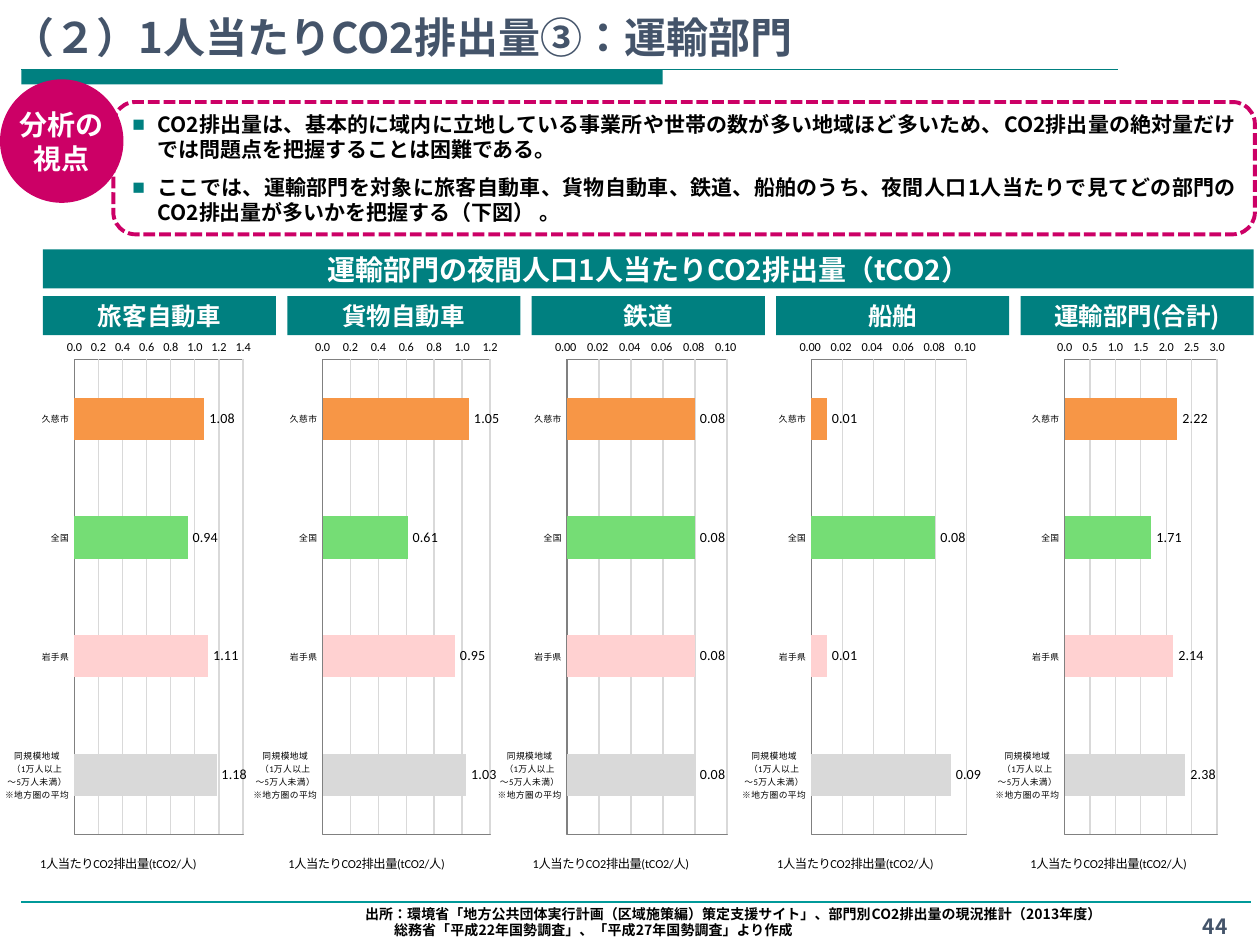
import pptx
import pptx.util
import pptx.chart.data
import pptx.dml.color
import pptx.enum.chart
import pptx.enum.dml
import pptx.enum.lang
import pptx.enum.shapes
import pptx.enum.text
import pptx.oxml.ns
from lxml import etree

Pt = pptx.util.Pt
RGB = pptx.dml.color.RGBColor.from_string
qn = pptx.oxml.ns.qn
ALIGN = pptx.enum.text.PP_ALIGN
ANCHOR = pptx.enum.text.MSO_ANCHOR
SHAPE = pptx.enum.shapes.MSO_SHAPE
COLORS = {
    "teal": "008080", "rule": "009999", "magenta": "CC0066", "navy": "44546A",
    "black": "000000", "white": "FFFFFF", "axis": "808080", "grid": "D9D9D9",
    "series": "4F81BD", "city": "F79646", "nation": "75DD75",
    "prefecture": "FFD1D1", "peers": "D9D9D9",
}
FONT = "Noto Sans CJK JP"

deck = pptx.Presentation()
deck.slide_width, deck.slide_height = pptx.util.Inches(10), pptx.util.Inches(7.5)
COL, ROW = deck.slide_width / 10, deck.slide_height / 7.5
slide = deck.slides.add_slide(deck.slide_layouts[1])
shapes = slide.shapes


def box(left, top, width, height):
    return tuple(round(v) for v in (left * COL, top * ROW, width * COL, height * ROW))


def style(frame, size, color, align, anchor):
    frame.word_wrap = True
    frame.auto_size = pptx.enum.text.MSO_AUTO_SIZE.NONE
    frame.vertical_anchor = anchor
    for paragraph in frame.paragraphs:
        paragraph.alignment = align
        for run in paragraph.runs:
            run.font.size, run.font.bold, run.font.name = Pt(size), True, FONT
            run.font.language_id = pptx.enum.lang.MSO_LANGUAGE_ID.JAPANESE
            run.font.color.rgb = RGB(COLORS[color])
            east_asian = etree.Element(qn("a:ea"), typeface=FONT)
            run.font._element.find(qn("a:latin")).addnext(east_asian)


title = shapes.title
title.left, title.top, title.width, title.height = box(0, 0, 8.69, 0.54)
title.text_frame.text = "（２）1人当たりCO2排出量③：運輸部門"
style(title.text_frame, 24, "navy", ALIGN.LEFT, ANCHOR.BOTTOM)

viewpoints = slide.placeholders[1]
viewpoints.left, viewpoints.top, viewpoints.width, viewpoints.height = box(0.95, 0.81, 8.96, 1.05)
viewpoints.text_frame.text = (
    "CO2排出量は、基本的に域内に立地している事業所や世帯の数が多い地域ほど多いため、CO2排出量の絶対量だけでは問題点を把握することは困難である。\n"
    "ここでは、運輸部門を対象に旅客自動車、貨物自動車、鉄道、船舶のうち、夜間人口1人当たりで見てどの部門のCO2排出量が多いかを把握する（下図） 。"
)
for order, paragraph in enumerate(viewpoints.text_frame.paragraphs):
    properties = paragraph._p.get_or_add_pPr()
    properties.set("marL", str(int(0.2 * COL)))
    properties.set("indent", str(int(-0.2 * COL)))
    bullet_color = etree.SubElement(properties, qn("a:buClr"))
    etree.SubElement(bullet_color, qn("a:srgbClr"), val=COLORS["teal"])
    etree.SubElement(properties, qn("a:buChar"), char="■")
    paragraph.space_before, paragraph.space_after = Pt(3 if order else 0), Pt(4)
style(viewpoints.text_frame, 12, "black", ALIGN.JUSTIFY, ANCHOR.MIDDLE)

for left, right, top, color in ((0.17, 8.87, 0.55, "teal"), (0.17, 9.93, 7.16, "rule")):
    start_x, y, span, _ = box(left, top, right - left, 0)
    rule = shapes.add_connector(pptx.enum.shapes.MSO_CONNECTOR.STRAIGHT, start_x, y, start_x + span, y)
    rule.line.color.rgb = RGB(COLORS[color])
    rule.line.width = Pt(0.75)
    etree.SubElement(rule._element.spPr, qn("a:effectLst"))

REGIONS = ["久慈市", "全国", "岩手県", "同規模地域\n（1万人以上\n～5万人未満）\n※地方圏の平均"]
TENTHS = "#,##0.0;[Red]\\-#,##0.0"
HUNDREDTHS = "#,##0.00_);[Red]\\(#,##0.00\\)"
SECTORS = [
    ("旅客自動車", 0, 2.02, 0.59, 1.34, (1.08, 0.94, 1.11, 1.18), 1.4, 0.2, TENTHS),
    ("貨物自動車", 1.97, 2.03, 2.56, 1.33, (1.05, 0.61, 0.95, 1.03), 1.2, 0.2, TENTHS),
    ("鉄道", 3.91, 1.99, 4.5, 1.27, (0.08, 0.08, 0.08, 0.08), 0.1, 0.02, HUNDREDTHS),
    ("船舶", 5.85, 1.97, 6.44, 1.23, (0.01, 0.08, 0.01, 0.09), 0.1, 0.02, HUNDREDTHS),
    ("運輸部門(合計)", 7.86, 1.89, 8.45, 1.21, (2.22, 1.71, 2.14, 2.38), 3, 0.5, TENTHS),
]
for name, left, width, plot_left, plot_width, values, top_value, step, axis_format in SECTORS:
    emissions = pptx.chart.data.CategoryChartData()
    emissions.categories = REGIONS
    emissions.add_series("Series 1", values)
    chart = shapes.add_chart(
        pptx.enum.chart.XL_CHART_TYPE.BAR_CLUSTERED, *box(left, 2.53, width, 4.6), emissions
    ).chart
    chart.has_legend = chart.has_title = False
    chart.font.size, chart.font.name = Pt(10), "Calibri"
    chart.font.color.rgb = RGB(COLORS["black"])

    regions, amounts = chart.category_axis, chart.value_axis
    for axis, size in ((regions, 5), (amounts, 7)):
        axis.major_tick_mark = axis.minor_tick_mark = pptx.enum.chart.XL_TICK_MARK.NONE
        axis.tick_labels.font.size = Pt(size)
        axis.tick_labels.font.name = "Calibri"
        axis.tick_labels.font.color.rgb = RGB(COLORS["black"])
    regions.reverse_order = True
    regions.format.line.color.rgb = RGB(COLORS["axis"])
    regions.format.line.width = Pt(0.75)
    amounts.format.line.fill.background()
    amounts.minimum_scale, amounts.maximum_scale, amounts.major_unit = 0, top_value, step
    amounts.tick_labels.number_format = axis_format
    amounts.tick_labels.number_format_is_linked = False
    amounts.major_gridlines.format.line.color.rgb = RGB(COLORS["grid"])
    amounts.major_gridlines.format.line.width = Pt(0.75)

    caption = amounts.axis_title.text_frame
    caption.text = "1人当たりCO2排出量(tCO2/人)"
    caption_font = caption.paragraphs[0].runs[0].font
    caption_font.size, caption_font.bold, caption_font.name = Pt(7), False, "Calibri"
    caption_font.color.rgb = RGB(COLORS["black"])

    plot = chart.plots[0]
    plot.vary_by_categories = False
    plot.gap_width = 182
    series = plot.series[0]
    series.invert_if_negative = False
    series.format.fill.solid()
    series.format.fill.fore_color.rgb = RGB(COLORS["series"])
    for index, region in enumerate(("city", "nation", "prefecture", "peers")):
        bar = series.points[index].format.fill
        bar.solid()
        bar.fore_color.rgb = RGB(COLORS[region])
    labels = series.data_labels
    labels.show_value = True
    labels.number_format, labels.number_format_is_linked = HUNDREDTHS, False
    labels.position = pptx.enum.chart.XL_LABEL_POSITION.OUTSIDE_END
    labels.font.size, labels.font.name = Pt(8), "Calibri"
    labels.font.color.rgb = RGB(COLORS["black"])

    plot_area = chart._chartSpace.chart.plotArea
    inner = {"layoutTarget": "inner", "xMode": "edge", "yMode": "edge",
             "x": (plot_left - left) / width, "y": 0.07, "w": plot_width / width, "h": 0.82}
    below = {"xMode": "edge", "yMode": "edge", "x": 0.3 / width, "y": 0.92}
    for parent, position, settings in ((plot_area, 0, inner), (amounts.axis_title._element, 1, below)):
        for unused in parent.findall(qn("c:layout")):
            parent.remove(unused)
        layout = etree.Element(qn("c:layout"))
        manual = etree.SubElement(layout, qn("c:manualLayout"))
        for key, value in settings.items():
            etree.SubElement(manual, qn("c:" + key), val=str(value))
        parent.insert(position, layout)
    border = etree.SubElement(etree.SubElement(plot_area, qn("c:spPr")), qn("a:ln"), w=str(int(Pt(0.75))))
    border_fill = etree.SubElement(border, qn("a:solidFill"))
    etree.SubElement(border_fill, qn("a:srgbClr"), val=COLORS["axis"])

blocks = [
    (SHAPE.RECTANGLE, (0.17, 0.55, 5.09, 0.12), "teal", "", 12),
    (SHAPE.ROUNDED_RECTANGLE, (0.9, 0.81, 9.06, 1.05), None, "", 12),
    (SHAPE.OVAL, (0, 0.63, 0.98, 0.98), "magenta", "分析の\n視点", 16),
    (SHAPE.RECTANGLE, (0.34, 1.98, 9.61, 0.31), "teal", "運輸部門の夜間人口1人当たりCO2排出量（tCO2）", 16),
]
for column, sector in enumerate(SECTORS):
    blocks.append((SHAPE.RECTANGLE, (0.34 + 1.94 * column, 2.35, 1.85, 0.31), "teal", sector[0], 14))
for preset, place, fill, wording, size in blocks:
    block = shapes.add_shape(preset, *box(*place))
    block.shadow.inherit = False
    if fill:
        block.fill.solid()
        block.fill.fore_color.rgb = RGB(COLORS[fill])
        block.line.fill.background()
    else:
        block.fill.background()
        block.line.color.rgb = RGB(COLORS["magenta"])
        block.line.width = Pt(2.25)
        block.line.dash_style = pptx.enum.dml.MSO_LINE.SQUARE_DOT
    if wording:
        block.text_frame.text = wording
        style(block.text_frame, size, "white", ALIGN.CENTER, ANCHOR.MIDDLE)
    if preset == SHAPE.OVAL:
        block.text_frame.word_wrap = False
        block.text_frame.margin_left = block.text_frame.margin_right = int(0.04 * COL)

page = shapes.add_textbox(*box(9.29, 7.2, 0.71, 0.28)).text_frame
page.text = "44"
style(page, 12, "navy", ALIGN.CENTER, ANCHOR.TOP)

sources = shapes.add_textbox(*box(2.8, 7.13, 6.56, 0.37)).text_frame
sources.text = (
    "出所：環境省「地方公共団体実行計画（区域施策編）策定支援サイト」、部門別CO2排出量の現況推計（2013年度）\n"
    "総務省「平成22年国勢調査」、「平成27年国勢調査」より作成"
)
style(sources, 8, "black", ALIGN.JUSTIFY, ANCHOR.BOTTOM)
for paragraph, margin, indent in zip(sources.paragraphs, (0.2, 0.23), (-0.2, 0)):
    paragraph._p.get_or_add_pPr().set("marL", str(int(margin * COL)))
    paragraph._p.get_or_add_pPr().set("indent", str(int(indent * COL)))

deck.save("out.pptx")
